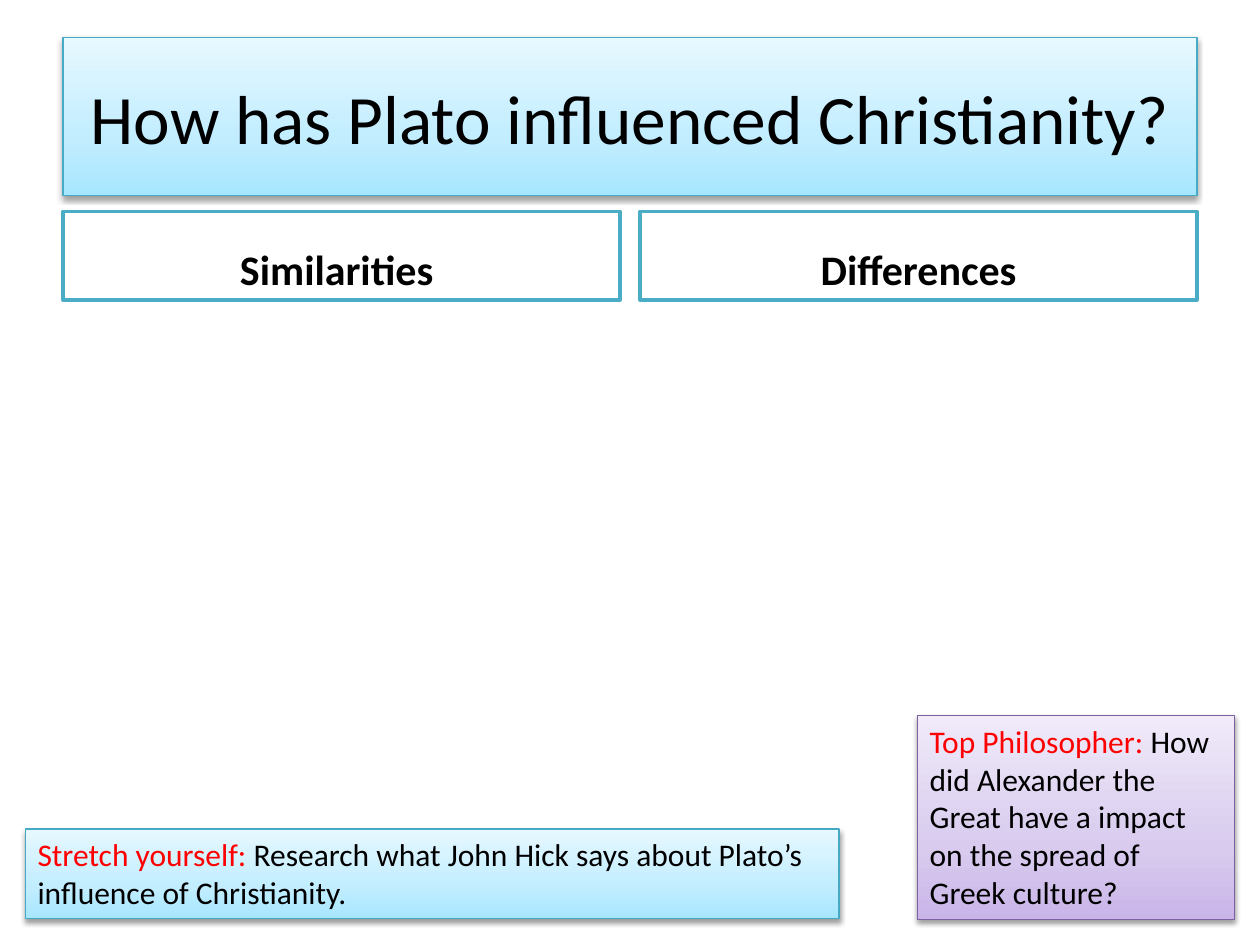
from copy import deepcopy
from dataclasses import dataclass

from lxml import etree
from pptx import Presentation
from pptx import util as u
from pptx.dml.color import RGBColor
from pptx.enum import shapes, text
from pptx.oxml.ns import qn


@dataclass(frozen=True)
class Theme:
    font: str = "Calibri"
    title_size: float = 39.6
    heading_size: float = 24
    note_size: float = 18
    ink: str = "000000"
    accent: str = "FF0000"
    paper: str = "FFFFFF"
    heading_line: str = "4BACC6"
    blue_line: str = "46AAC5"
    purple_line: str = "7D60A0"
    # Gradient colours run from the bottom edge to the top edge.
    blue: tuple = ("A7E6FF", "C1EDFF", "E7F8FF")
    purple: tuple = ("C9B5E8", "D8CBEE", "F0EAF9")
    stops: tuple = (0, 0.35, 1)


THEME = Theme()


def add_box(s, box, line, width, anchor):
    sp = s.shapes.add_shape(shapes.MSO_SHAPE.RECTANGLE, *map(u.Inches, box))
    sp.shadow.inherit = False
    sp.line.color.rgb = RGBColor.from_string(line)
    sp.line.width = u.Pt(width)
    sp.text_frame.word_wrap = True
    sp.text_frame.vertical_anchor = anchor
    return sp


def shade(sp, colors):
    """Give the box a three-stop vertical gradient and a soft shadow below."""
    sp.fill.gradient()
    sp.fill.gradient_angle = 90
    sp_pr = sp._element.spPr
    gs_lst = sp_pr.find(".//" + qn("a:gsLst"))
    gs_lst.insert(1, deepcopy(gs_lst[0]))
    for stop, color, position in zip(sp.fill.gradient_stops, colors, THEME.stops):
        stop.color.rgb = RGBColor.from_string(color)
        stop.position = position

    shadow = etree.SubElement(
        sp_pr.find(qn("a:effectLst")), qn("a:outerShdw"),
        blurRad=str(u.Pt(3.1)), dist=str(u.Pt(1.6)), dir="5400000", rotWithShape="0")
    color = etree.SubElement(shadow, qn("a:srgbClr"), val=THEME.ink)
    etree.SubElement(color, qn("a:alpha"), val="38000")


def write(sp, runs, size, align, bold=False):
    """Fill the first paragraph with (text, colour) runs."""
    p = sp.text_frame.paragraphs[0]
    p.alignment = align
    for words, color in runs:
        r = p.add_run()
        r.text = words
        r.font.name = THEME.font
        r.font.size = u.Pt(size)
        r.font.bold = bold
        r.font.color.rgb = RGBColor.from_string(color)
    return p


def add_title(s, words, box):
    sp = add_box(s, box, THEME.blue_line, 0.75, text.MSO_ANCHOR.MIDDLE)
    shade(sp, THEME.blue)
    write(sp, [(words, THEME.ink)], THEME.title_size, text.PP_ALIGN.CENTER)


def add_heading(s, words, box):
    sp = add_box(s, box, THEME.heading_line, 2, text.MSO_ANCHOR.BOTTOM)
    sp.fill.solid()
    sp.fill.fore_color.rgb = RGBColor.from_string(THEME.paper)
    p = write(sp, [(words, THEME.ink)], THEME.heading_size,
              text.PP_ALIGN.CENTER, bold=True)
    p.space_before = u.Pt(0.2 * THEME.heading_size)


def add_note(s, label, words, box, colors, line):
    sp = add_box(s, box, line, 0.75, text.MSO_ANCHOR.TOP)
    shade(sp, colors)
    sp.text_frame.auto_size = text.MSO_AUTO_SIZE.SHAPE_TO_FIT_TEXT
    write(sp, [(label, THEME.accent), (words, THEME.ink)],
          THEME.note_size, text.PP_ALIGN.LEFT)


def main():
    prs = Presentation()
    prs.slide_width, prs.slide_height = u.Inches(10), u.Inches(7.5)
    s = prs.slides.add_slide(prs.slide_layouts[6])

    margin, content_width, column_width = 0.5, 9, 4.42
    add_title(s, "How has Plato influenced Christianity?",
              (margin, 0.3, content_width, 1.25))
    column_step = content_width - column_width
    for i, words in enumerate(("Similarities ", "Differences")):
        add_heading(s, words, (margin + i * column_step, 1.68, column_width, 0.7))

    add_note(s, "Stretch yourself: ",
             "Research what John Hick says about Plato’s influence of Christianity.",
             (0.2, 6.58, 6.46, 0.71), THEME.blue, THEME.blue_line)
    add_note(s, "Top Philosopher: ",
             "How did Alexander the Great have a impact on the spread of Greek culture?",
             (7.28, 5.68, 2.52, 1.62), THEME.purple, THEME.purple_line)

    prs.save("out.pptx")


if __name__ == "__main__":
    main()
